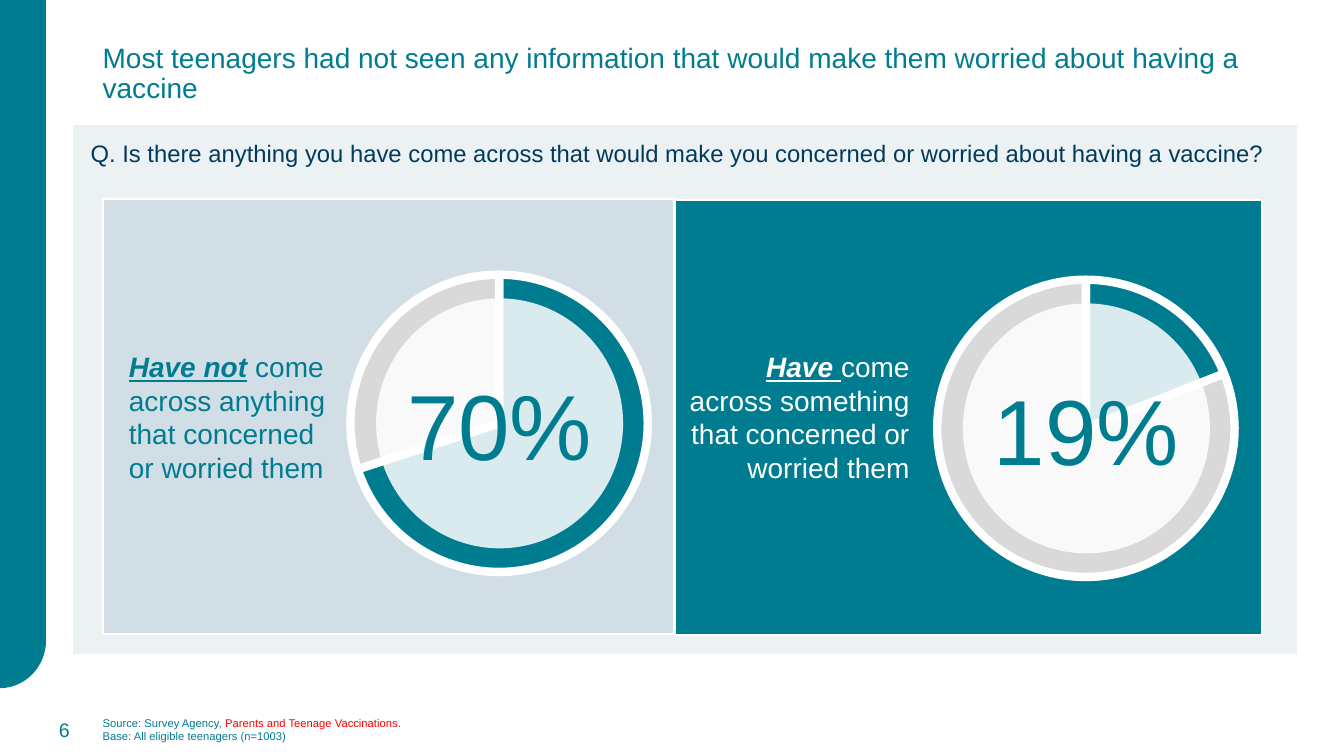
from lxml import etree
from pptx import Presentation
from pptx.chart.data import CategoryChartData
from pptx.dml.color import RGBColor
from pptx.enum.chart import XL_CHART_TYPE
from pptx.enum.shapes import MSO_SHAPE
from pptx.enum.text import MSO_ANCHOR, PP_ALIGN
from pptx.oxml import parse_xml
from pptx.oxml.ns import qn
from pptx.util import Inches, Pt

# Content
TEAL, WHITE, NAVY, RED, GREY = "007C91", "FFFFFF", "003B5C", "FF0000", "D9D9D9"
PALE, MIST = "ECF1F4", "D2DEE6"
STRONG = {"bold": True, "italic": True, "underline": True}

# Each text: box, size, alignment, anchor, line spacing, paragraphs of (words, colour, format)
TEXTS = [
    ((0.92, 0.01, 11.5, 1.45), 20, PP_ALIGN.LEFT, MSO_ANCHOR.MIDDLE, 0.9,
     [[("Most teenagers had not seen any information that would make them "
        "worried about having a vaccine", TEAL, {})]]),
    ((0.92, 7.04, 11.6, 0.4), 8, PP_ALIGN.LEFT, MSO_ANCHOR.MIDDLE, None,
     [[("Source: Survey Agency, ", TEAL, {}),
       ("Parents and Teenage Vaccinations", RED, {}), (".", TEAL, {})],
      [("Base: All eligible teenagers (n=1003)", TEAL, {})]]),
    ((0.14, 7.04, 0.65, 0.4), 14, PP_ALIGN.RIGHT, MSO_ANCHOR.MIDDLE, None,
     [[("6", TEAL, {})]]),
    ((0.8, 1.33, 12.59, 0.39), 17, PP_ALIGN.LEFT, MSO_ANCHOR.TOP, None,
     [[("Q. Is there anything you have come across that would make you "
        "concerned or worried about having a vaccine?", NAVY, {})]]),
    ((1.18, 3.42, 2.17, 1.45), 20, PP_ALIGN.LEFT, MSO_ANCHOR.TOP, None,
     [[("Have not", TEAL, STRONG),
       (" come across anything that concerned or worried them", TEAL, {})]]),
    ((6.69, 3.42, 2.43, 1.45), 20, PP_ALIGN.RIGHT, MSO_ANCHOR.TOP, None,
     [[("Have ", WHITE, STRONG),
       ("come across something that concerned or worried them", WHITE, {})]]),
]
PANELS = [
    ((0.71, 1.23, 12.17, 5.27), PALE),
    ((1.02, 1.97, 5.68, 4.32), MIST),
    ((6.69, 1.98, 5.83, 4.32), TEAL),
]
PIES = [(70, 4.95, 4.2), (19, 10.77, 4.25)]  # percent, centre x, centre y
WIDE, HIGH, ROUND = 3.63, 3.24, 2.95  # chart frame and pie diameter

deck = Presentation()
deck.slide_width, deck.slide_height = Inches(13.33), Inches(7.5)
slide = deck.slides.add_slide(deck.slide_layouts[6])


def tint(hue):
    return RGBColor.from_string(hue)


def place(box):
    return [Inches(v) for v in box]


def paint(item, fill, line, width):
    item.fill.solid()
    item.fill.fore_color.rgb = tint(fill)
    item.line.color.rgb = tint(line)
    item.line.width = Pt(width)


def add_block(kind, box, fill, line, width):
    block = slide.shapes.add_shape(kind, *place(box))
    block.shadow.inherit = False
    paint(block, fill, line, width)
    return block


def write(frame, paras, size, align, anchor, space=None):
    frame.vertical_anchor = anchor
    for i, runs in enumerate(paras):
        para = frame.add_paragraph() if i else frame.paragraphs[0]
        para.alignment = align
        if space:
            para.line_spacing = space
        for words, hue, style in runs:
            run = para.add_run()
            run.text = words
            run.font.color.rgb = tint(hue)
            for key, value in {"name": "Arial", "size": Pt(size), **style}.items():
                setattr(run.font, key, value)


def add_pie(share, mid_x, mid_y):
    data = CategoryChartData()
    data.categories = ["1", "2"]
    data.add_series("Series 1", (share, 100 - share))
    box = (mid_x - WIDE / 2, mid_y - HIGH / 2, WIDE, HIGH)
    chart = slide.shapes.add_chart(XL_CHART_TYPE.PIE, *place(box), data).chart
    chart.has_legend = chart.has_title = False
    for key, value in {"name": "Arial", "size": Pt(10)}.items():
        setattr(chart.font, key, value)
    chart.font.color.rgb = tint("000000")
    plot = chart.plots[0]
    plot.vary_by_categories = True
    for i, hue in enumerate((TEAL, GREY)):
        paint(plot.series[0].points[i].format, hue, WHITE, 6)

    # Fix the pie diameter inside the chart frame
    w, h = ROUND / WIDE, ROUND / HIGH
    marks = {"layoutTarget": "inner", "xMode": "edge", "yMode": "edge",
             "x": (1 - w) / 2, "y": (1 - h) / 2, "w": w, "h": h}
    parts = "".join(
        f'<c:{k} val="{v if isinstance(v, str) else round(v, 4)}"/>'
        for k, v in marks.items())
    layout = parse_xml(
        '<c:layout xmlns:c="http://schemas.openxmlformats.org/drawingml/2006/chart">'
        f"<c:manualLayout>{parts}</c:manualLayout></c:layout>")
    area = chart.element.find(".//" + qn("c:plotArea"))
    for old in area.findall(qn("c:layout")):
        area.remove(old)
    area.insert(0, layout)

    # Translucent disc with the figure
    disc = add_block(MSO_SHAPE.OVAL, (mid_x - 1.22, mid_y - 1.24, 2.45, 2.48),
                     WHITE, WHITE, 1)
    disc.line.fill.background()
    shade = disc.element.spPr.find(qn("a:solidFill"))[0]
    etree.SubElement(shade, qn("a:alpha")).set("val", "85000")
    frame = disc.text_frame
    frame.word_wrap = False
    for side in ("left", "right", "top", "bottom"):
        setattr(frame, f"margin_{side}", 0)
    write(frame, [[(f"{share}%", TEAL, {})]], 66, PP_ALIGN.CENTER, MSO_ANCHOR.MIDDLE)


# Side band with rounded foot
add_block(MSO_SHAPE.RECTANGLE, (0, 0, 0.45, 6.35), TEAL, TEAL, 1)
foot = add_block(MSO_SHAPE.PIE, (-0.46, 5.88, 0.91, 0.94), TEAL, TEAL, 1)
foot.rotation = 180
foot.adjustments[0], foot.adjustments[1] = 108, 162

# Panels, pies and texts
for box, fill in PANELS:
    add_block(MSO_SHAPE.RECTANGLE, box, fill, WHITE, 1.5)
for pie in PIES:
    add_pie(*pie)
for box, size, align, anchor, space, paras in TEXTS:
    frame = slide.shapes.add_textbox(*place(box)).text_frame
    frame.word_wrap = True
    write(frame, paras, size, align, anchor, space)

deck.save("out.pptx")
